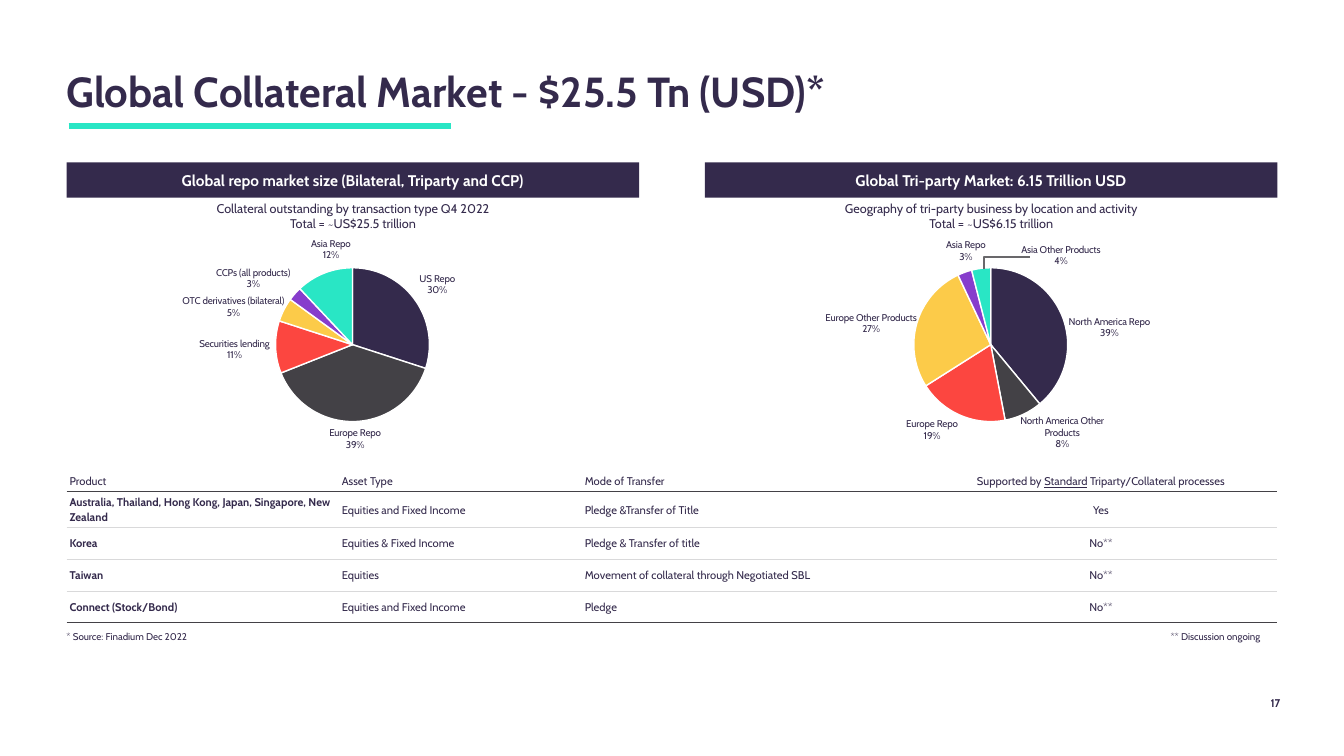
from copy import deepcopy
from dataclasses import dataclass

from lxml.etree import SubElement as Sub
from pptx import Presentation
from pptx.chart.data import CategoryChartData as Data
from pptx.dml.color import RGBColor as RGB
from pptx.enum.chart import XL_CHART_TYPE as Kind, XL_LABEL_POSITION as Spot
from pptx.enum.shapes import MSO_CONNECTOR as Conn, MSO_SHAPE as Form
from pptx.enum.text import MSO_ANCHOR as Anchor, PP_ALIGN as Align
from pptx.oxml import parse_xml
from pptx.oxml.ns import nsdecls, qn
from pptx.util import Inches, Pt


@dataclass(frozen=True)
class Theme:
    font: str = "Cabin"
    ink: str = "342A4C"
    dark: str = "434146"
    mint: str = "29E6C5"
    pale: str = "D9D9DA"
    gray: str = "69686B"
    white: str = "FFFFFF"
    slices: tuple = ("342A4C", "434146", "FC4640", "FCCB49", "873DCC", "29E6C5")
    title: int = 30
    band: int = 11
    lead: int = 9
    cell: int = 8
    note: int = 7


T = Theme()
LEFT, RIGHT, HALF = 0.66, 6.99, 5.68

REPO = {
    "US Repo": 30,
    "Europe Repo": 39,
    "Securities lending": 11,
    "OTC derivatives (bilateral)": 5,
    "CCPs (all products)": 3,
    "Asia Repo": 12,
}
PARTY = {
    "North America Repo": 39,
    "North America Other Products": 8,
    "Europe Repo": 19,
    "Europe Other Products": 27,
    "Asia Repo": 3,
    "Asia Other Products": 4,
}
REPO_MOVES = {2: (0, 0.01), 3: (0.01, 0.05), 5: (0.05, -0.03)}
PARTY_MOVES = {0: (0, 0.1), 1: (-0.01, -0.02), 2: (0, -0.01),
               3: (0.01, 0.06), 4: (0.04, -0.02), 5: (0.21, 0.02)}
HEAD = ["Product", "Asset Type", "Mode of Transfer",
        ["Supported by ", "Standard", " Triparty/Collateral processes"]]
ROWS = [
    HEAD,
    ["Australia, Thailand, Hong Kong, Japan, Singapore, New Zealand",
     "Equities and Fixed Income", "Pledge &Transfer of Title", "Yes"],
    ["Korea", "Equities & Fixed Income", "Pledge & Transfer of title", "No**"],
    ["Taiwan", "Equities", "Movement of collateral through Negotiated SBL", "No**"],
    ["Connect (Stock/Bond)", "Equities and Fixed Income", "Pledge", "No**"],
]


def box(x, y, w, h):
    return Inches(x), Inches(y), Inches(w), Inches(h)


def style(font, size, color=T.ink, bold=False):
    font.name, font.size, font.bold = T.font, Pt(size), bold
    font.color.rgb = RGB.from_string(color)


def add_text(slide, lines, place, size, bold=False, align=Align.LEFT, pad=0, wrap=True):
    frame = slide.shapes.add_textbox(*box(*place)).text_frame
    frame.word_wrap = wrap
    frame.margin_left = frame.margin_right = 0
    frame.margin_top = frame.margin_bottom = Inches(pad)
    frame.text = "\n".join(lines)
    for para in frame.paragraphs:
        para.alignment = align
        style(para.font, size, bold=bold)
    return frame


def add_band(slide, x, text):
    band = slide.shapes.add_shape(Form.RECTANGLE, *box(x, 1.61, HALF, 0.35))
    band.shadow.inherit = False
    band.fill.solid()
    band.fill.fore_color.rgb = RGB.from_string(T.ink)
    band.line.fill.background()
    frame = band.text_frame
    frame.vertical_anchor = Anchor.MIDDLE
    frame.text = text
    para = frame.paragraphs[0]
    para.alignment = Align.CENTER
    style(para.font, T.band, T.white, True)


def add_rule(slide):
    rule = slide.shapes.add_connector(
        Conn.STRAIGHT, Inches(0.68), Inches(1.25), Inches(4.47), Inches(1.25))
    rule.line.color.rgb = RGB.from_string(T.mint)
    rule.line.width = Pt(4)
    Sub(rule._element.spPr, qn("a:effectLst"))


def set_plot(chart):
    area = chart._chartSpace.chart.plotArea
    for old in area.findall(qn("c:layout")):
        area.remove(old)
    area.insert(0, parse_xml(
        f'<c:layout {nsdecls("c")}><c:manualLayout><c:layoutTarget val="inner"/>'
        '<c:xMode val="edge"/><c:yMode val="edge"/><c:x val="0.365"/><c:y val="0.153"/>'
        '<c:w val="0.269"/><c:h val="0.694"/></c:manualLayout></c:layout>'))


def move_labels(root, moves):
    shared = [part for part in root if part.tag != qn("c:showLeaderLines")]
    for spot, (index, (dx, dy)) in enumerate(moves.items()):
        label = parse_xml(
            f'<c:dLbl {nsdecls("c")}><c:idx val="{index}"/><c:layout><c:manualLayout>'
            f'<c:x val="{dx}"/><c:y val="{dy}"/></c:manualLayout></c:layout></c:dLbl>')
        label.extend(deepcopy(part) for part in shared)
        root.insert(spot, label)


def add_pie(slide, x, parts, moves):
    data = Data()
    data.categories = list(parts)
    data.add_series("Series 1", list(parts.values()))
    chart = slide.shapes.add_chart(Kind.PIE, *box(x, 2.32, HALF, 2.2), data).chart
    chart.has_title = chart.has_legend = False
    style(chart.font, T.lead)
    set_plot(chart)
    chart.plots[0].vary_by_categories = True
    series = chart.plots[0].series[0]
    for i, color in enumerate(T.slices):
        form = series.points[i].format
        form.fill.solid()
        form.fill.fore_color.rgb = RGB.from_string(color)
        form.line.color.rgb = RGB.from_string(T.white)
        form.line.width = Pt(1)
    labels = series.data_labels
    labels.show_percentage = labels.show_category_name = True
    labels.show_value = False
    labels.number_format = "0%"
    labels.number_format_is_linked = False
    labels.position = Spot.OUTSIDE_END
    style(labels.font, T.note)
    root = labels._element
    for lead in root.findall(qn("c:showLeaderLines")):
        root.remove(lead)
    Sub(root, qn("c:separator")).text = "\n"
    Sub(root, qn("c:showLeaderLines")).set("val", "0")
    move_labels(root, moves)


def add_leader(slide):
    pen = slide.shapes.build_freeform(Inches(9.76), Inches(2.67))
    pen.add_line_segments(
        [(Inches(9.76), Inches(2.55)), (Inches(10.22), Inches(2.55))], close=False)
    lead = pen.convert_to_shape()
    lead.shadow.inherit = False
    lead.fill.background()
    lead.line.color.rgb = RGB.from_string(T.gray)
    lead.line.width = Pt(1)


def set_edge(cell, side, color, width):
    cell._tc.get_or_add_tcPr().append(parse_xml(
        f'<a:{side} {nsdecls("a")} w="{Pt(width)}"><a:solidFill>'
        f'<a:srgbClr val="{color}"/></a:solidFill></a:{side}>'))


def fill_cell(cell, text, row, col):
    cell.margin_left = cell.margin_right = Inches(0.03)
    cell.margin_top = cell.margin_bottom = Inches(0.03)
    cell.vertical_anchor = Anchor.MIDDLE if row else Anchor.BOTTOM
    para = cell.text_frame.paragraphs[0]
    para.line_spacing = 1.07
    para.alignment = Align.CENTER if col == 3 else Align.LEFT
    if row < 4 and (col == 0 or row == 0):
        para.space_after = Pt(1)
    for i, piece in enumerate([text] if isinstance(text, str) else text):
        run = para.add_run()
        run.text = piece
        if i == 1:
            run.font.underline = True
    style(para.font, T.cell, bold=row > 0 and col == 0)
    strong, light = (T.dark, 0.75), (T.pale, 0.5)
    if row:
        set_edge(cell, "lnT", *(strong if row == 1 else light))
    set_edge(cell, "lnB", *(strong if row in (0, 4) else light))
    cell.fill.background()


def add_grid(slide):
    frame = slide.shapes.add_table(len(ROWS), len(HEAD), *box(LEFT, 4.56, 12.01, 1.62))
    grid = frame.table
    grid.first_row = grid.horz_banding = False
    grid._tbl.tblPr.find(qn("a:tableStyleId")).text = "{2D5ABB26-0587-4C30-8999-92F81FD0307C}"
    for col, width in zip(grid.columns, (2.7, 2.41, 3.4, 3.5)):
        col.width = Inches(width)
    for i, (row, height) in enumerate(zip(ROWS, (0.32, 0.35, 0.32, 0.32, 0.31))):
        grid.rows[i].height = Inches(height)
        for j, text in enumerate(row):
            fill_cell(grid.cell(i, j), text, i, j)


def main():
    deck = Presentation()
    deck.slide_width, deck.slide_height = Inches(13.33), Inches(7.5)
    slide = deck.slides.add_slide(deck.slide_layouts[6])
    page = add_text(slide, ["17"], (10.9, 6.83, 1.8, 0.21), T.cell, True, Align.RIGHT, 0.05)
    page.paragraphs[0].line_spacing = Pt(12)
    add_rule(slide)
    title = add_text(slide, ["Global Collateral Market - $25.5 Tn (USD)*"],
                     (LEFT, 0.57, 11.98, 0.65), T.title, True, pad=0.05)
    title.vertical_anchor = Anchor.MIDDLE
    halves = (
        (LEFT, "Global repo market size (Bilateral, Triparty and CCP)",
         ["Collateral outstanding by transaction type Q4 2022", "Total = ~US$25.5 trillion"],
         REPO, REPO_MOVES),
        (RIGHT, "Global Tri-party Market: 6.15 Trillion USD",
         ["Geography of tri-party business by location and activity",
          "Total = ~US$6.15 trillion"],
         PARTY, PARTY_MOVES),
    )
    for x, head, lead, parts, moves in halves:
        add_band(slide, x, head)
        add_text(slide, lead, (x, 1.99, HALF, 0.3), T.lead, align=Align.CENTER)
        add_pie(slide, x, parts, moves)
    add_leader(slide)
    add_grid(slide)
    add_text(slide, ["* Source: Finadium Dec 2022"], (LEFT, 6.26, 1.34, 0.12), T.note, wrap=False)
    add_text(slide, ["** Discussion ongoing"], (11.61, 6.26, 1.06, 0.12), T.note, wrap=False)
    deck.save("out.pptx")


if __name__ == "__main__":
    main()
